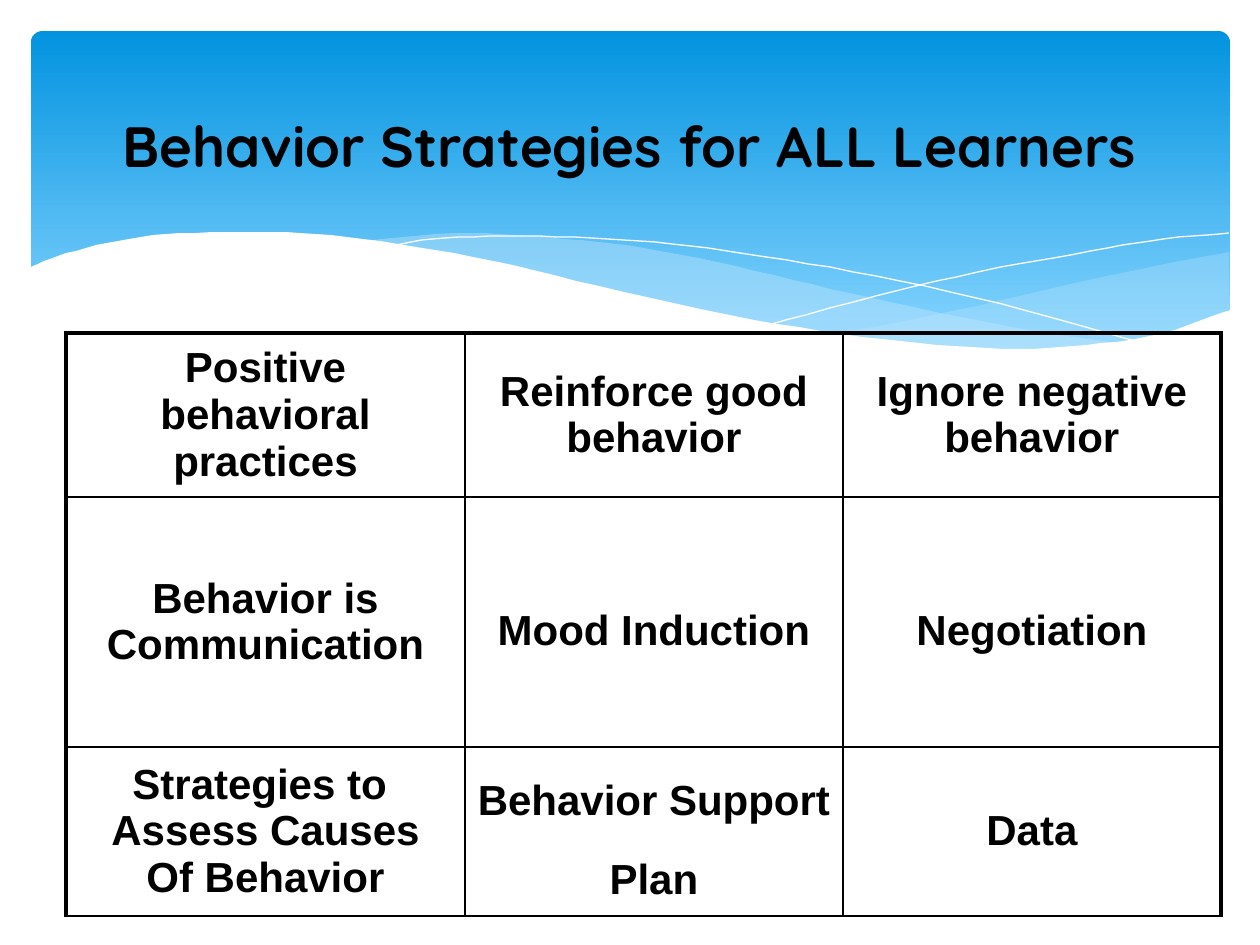
"""Build a slide with a wave banner, a title and a three by three table of behavior strategies."""
from itertools import pairwise

from lxml.etree import SubElement
from pptx import Presentation
from pptx.dml.color import RGBColor
from pptx.enum.shapes import MSO_SHAPE as Shape
from pptx.enum.text import MSO_ANCHOR as Anchor, PP_ALIGN as Align
from pptx.oxml.ns import qn
from pptx.util import Pt

PX = 914400 // 126
STEPS = 5
BLACK, WHITE, PALE = "000000", "FFFFFF", "C6E7FC"
TITLE = "Behavior Strategies for ALL Learners"
ROWS = [
    [["Positive behavioral practices"], ["Reinforce good behavior"], ["Ignore negative", "behavior"]],
    [["Behavior is", "Communication"], ["Mood Induction"], ["Negotiation"]],
    [["Strategies to ", "Assess Causes", "Of Behavior"], ["Behavior Support", "Plan"], ["Data"]],
]
LOOSE = {(1, 1), (1, 2), (2, 1)}
COLUMN_WIDTHS = [399, 378, 378]
ROW_HEIGHTS = [153, 250, 169]

RIGHT_BAND = [
    [(1229, 252), (1160, 265), (1085, 281), (982, 305), (890, 324), (833, 334)],
    [(833, 334), (906, 343), (984, 349), (1052, 349), (1120, 343), (1178, 330), (1230, 311)],
]
LEFT_BAND = [
    [(1125, 344), (1017, 328), (890, 302), (793, 280), (699, 258), (616, 244), (529, 236),
     (455, 233), (360, 241)],
    [(360, 241), (456, 256), (566, 280), (668, 302), (779, 325), (876, 340), (959, 349),
     (1031, 350), (1080, 349), (1125, 344)],
]
FALLING_LINE = [[(389, 246), (433, 239), (505, 236), (591, 238), (672, 244), (766, 257),
                 (876, 276), (1002, 304), (1143, 343)]]
RISING_LINE = [[(772, 324), (876, 296), (978, 272), (1091, 251), (1164, 239), (1229, 233)]]
WHITE_WAVE = [
    [(1231, 310), (1159, 334), (1087, 345), (1019, 349), (937, 345), (842, 334), (730, 315),
     (599, 286), (493, 261), (398, 244), (315, 234), (243, 232), (166, 234), (107, 243),
     (58, 256), (29, 268)],
    [(29, 268), (29, 415)],
    [(29, 415), (1231, 415)],
]
WAVES = [
    (RIGHT_BAND, PALE, 29),
    (LEFT_BAND, PALE, 40),
    (FALLING_LINE, None, None),
    (RISING_LINE, None, None),
    (WHITE_WAVE, WHITE, 100),
]


def color(value):
    return RGBColor.from_string(value)


def px(*values):
    return [value * PX for value in values]


def smooth(points):
    """Return a Catmull-Rom curve through the points."""
    padded = [points[0], *points, points[-1]]
    curve = [points[0]]
    for i, _ in enumerate(pairwise(points)):
        for step in range(1, STEPS + 1):
            t = step / STEPS
            curve.append(tuple(
                (2 * b + (c - a) * t + (2 * a - 5 * b + 4 * c - d) * t**2
                 + (3 * b - a - 3 * c + d) * t**3) / 2
                for a, b, c, d in zip(*padded[i:i + 4])))
    return curve


def add_wave(page, pieces, fill, opacity):
    points = [point for piece in pieces for point in smooth(piece)]
    builder = page.shapes.build_freeform(*points[0], scale=PX)
    builder.add_line_segments(points[1:], close=fill is not None)
    wave = builder.convert_to_shape()
    wave.shadow.inherit = False
    if fill is None:
        wave.fill.background()
        wave.line.color.rgb = color(WHITE)
        wave.line.width = Pt(0)
        return
    wave.line.fill.background()
    wave.fill.solid()
    wave.fill.fore_color.rgb = color(fill)
    if opacity < 100:
        tone = wave.fill._xPr.find(f"{qn('a:solidFill')}/{qn('a:srgbClr')}")
        SubElement(tone, qn("a:alpha"), val=str(opacity * 1000))


def add_banner(page):
    banner = page.shapes.add_shape(Shape.ROUNDED_RECTANGLE, *px(31, 31, 1199, 340))
    banner.adjustments[0] = 0.034
    banner.shadow.inherit = False
    banner.line.fill.background()
    banner.fill.gradient()
    banner.fill.gradient_angle = 270
    for stop, position, tone in zip(banner.fill.gradient_stops, (0, 0.9), ("0293E0", "83D3FE")):
        stop.position = position
        stop.color.rgb = color(tone)


def add_span(para, text, font, size):
    para.alignment = Align.CENTER
    span = para.add_run()
    span.text = text
    span.font.name, span.font.size, span.font.bold = font, Pt(size), True
    span.font.color.rgb = color(BLACK)


def add_title(page):
    box = page.shapes.add_textbox(*px(94, 83, 1071, 93))
    frame = box.text_frame
    frame.word_wrap = True
    frame.vertical_anchor = Anchor.TOP
    frame.margin_top, frame.margin_bottom = px(28, 0)
    add_span(frame.paragraphs[0], TITLE, "Quicksand", 32.4)


def set_borders(cell, widths):
    properties = cell._tc.get_or_add_tcPr()
    for index, (side, width) in enumerate(widths.items()):
        line = SubElement(properties, qn(f"a:ln{side}"), w=str(Pt(width)))
        SubElement(SubElement(line, qn("a:solidFill")), qn("a:srgbClr"), val=BLACK)
        properties.insert(index, line)


def add_strategies(page):
    size = px(sum(COLUMN_WIDTHS), sum(ROW_HEIGHTS))
    table = page.shapes.add_table(len(ROWS), len(COLUMN_WIDTHS), *px(66, 333), *size).table
    table.first_row = table.horz_banding = False
    for column, width in zip(table.columns, COLUMN_WIDTHS):
        column.width = width * PX
    last = len(COLUMN_WIDTHS) - 1
    for r, (row, height) in enumerate(zip(ROWS, ROW_HEIGHTS)):
        table.rows[r].height = height * PX
        for c, lines in enumerate(row):
            cell = table.cell(r, c)
            cell.fill.background()
            cell.vertical_anchor = Anchor.MIDDLE
            set_borders(cell, {"L": 1 if c else 2.25, "R": 2.25 if c == last else 1,
                               "T": 1 if r else 2.25, "B": 1})
            frame = cell.text_frame
            for i, text in enumerate(lines):
                para = frame.add_paragraph() if i else frame.paragraphs[0]
                if (r, c) in LOOSE:
                    para.line_spacing = 1.4
                    para.space_before = Pt(8)
                add_span(para, text, "Arial", 24)


def main():
    deck = Presentation()
    deck.slide_width, deck.slide_height = px(1260, 945)
    page = deck.slides.add_slide(deck.slide_layouts[6])
    add_banner(page)
    for wave in WAVES:
        add_wave(page, *wave)
    add_title(page)
    add_strategies(page)
    deck.save("out.pptx")


if __name__ == "__main__":
    main()
